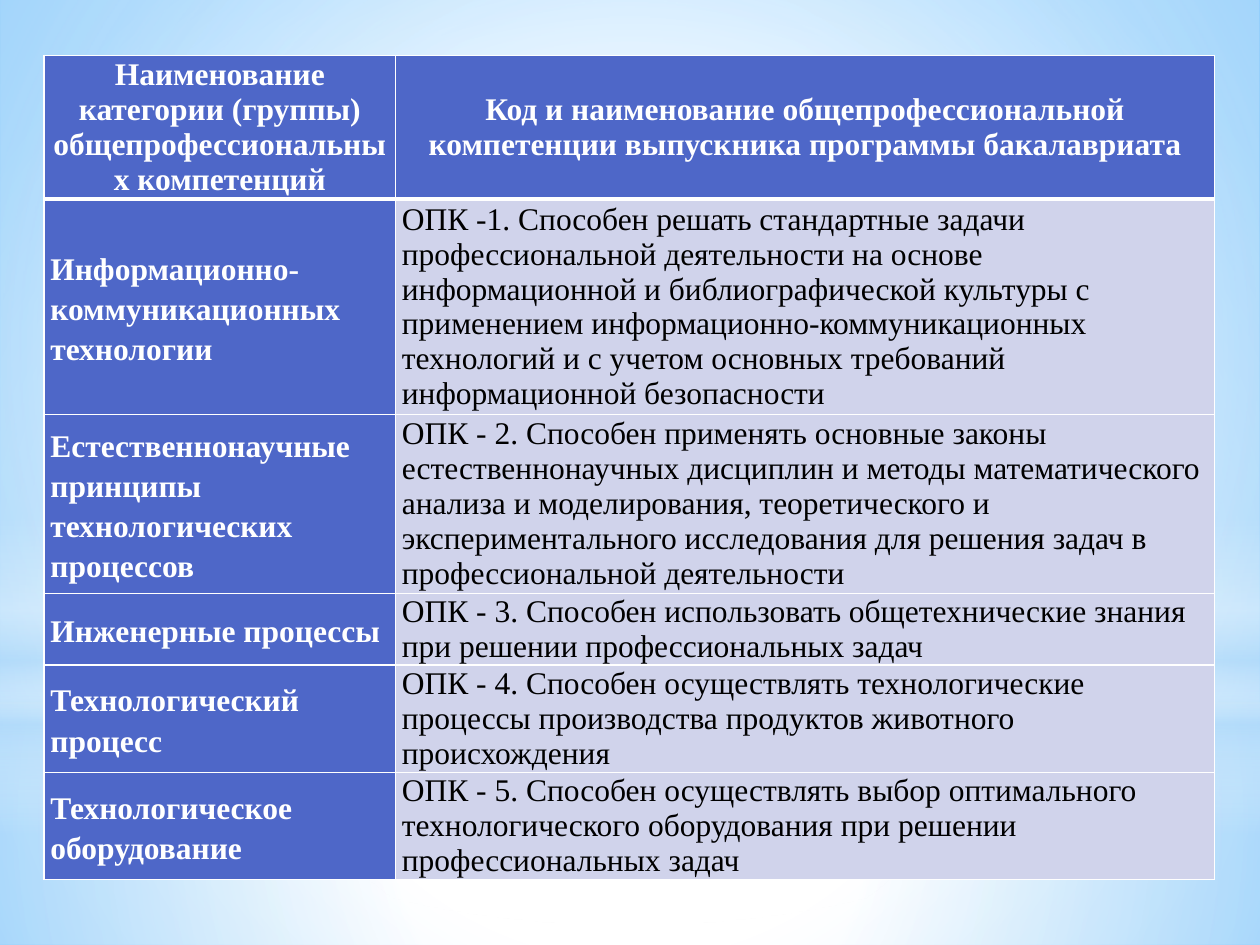
from dataclasses import dataclass

from lxml import etree
from pptx import Presentation
from pptx.dml.color import RGBColor
from pptx.enum import shapes, text
from pptx.oxml import ns
from pptx.util import Inches, Pt


@dataclass(frozen=True)
class Theme:
    font: str = "Times New Roman"
    size: int = 18
    white: str = "FFFFFF"
    black: str = "000000"
    accent: str = "4E67C8"
    pale: str = "D0D3EB"
    sky: str = "63BCFF"
    mist: str = "B4DCFA"
    rule: int = 1
    header_rule: int = 3


THEME = Theme()
CENTRE = (50, 50, 50, 50)
COLUMNS = (2.79, 6.5)
ROWS = (1.14, 1.71, 1.42, 0.57, 0.85, 0.85)
HEADER = (
    "Наименование категории (группы) общепрофессиональных компетенций",
    "Код и наименование общепрофессиональной компетенции выпускника программы бакалавриата",
)
COMPETENCIES = (
    (("Информационно-коммуникационных технологии",),
     "ОПК -1. Способен решать стандартные задачи профессиональной деятельности на основе "
     "информационной и библиографической культуры с применением "
     "информационно-коммуникационных технологий и с учетом основных требований "
     "информационной безопасности"),
    (("Естественнонаучные", "принципы технологических процессов"),
     "ОПК - 2. Способен применять основные законы естественнонаучных дисциплин и методы "
     "математического анализа и моделирования, теоретического и экспериментального "
     "исследования для решения задач в профессиональной деятельности"),
    (("Инженерные процессы",),
     "ОПК - 3. Способен использовать общетехнические знания при решении "
     "профессиональных задач"),
    (("Технологический процесс",),
     "ОПК - 4. Способен осуществлять технологические процессы производства продуктов "
     "животного происхождения"),
    (("Технологическое оборудование",),
     "ОПК - 5. Способен осуществлять выбор оптимального технологического оборудования "
     "при решении профессиональных задач"),
)


def add_node(parent, tag, **attributes):
    node = etree.SubElement(parent, ns.qn(tag))
    for name, value in attributes.items():
        node.set(name, str(value))
    return node


def paint_gradient(element, stops, focus=None):
    solid = element.xpath(".//a:solidFill")[0]
    holder = solid.getparent()
    gradient = add_node(holder, "a:gradFill", rotWithShape=1)
    stop_list = add_node(gradient, "a:gsLst")
    for position, colour, opacity in stops:
        stop = add_node(stop_list, "a:gs", pos=position * 1000)
        shade = add_node(stop, "a:srgbClr", val=colour)
        if opacity < 100:
            add_node(shade, "a:alpha", val=opacity * 1000)
    if focus:
        route = add_node(gradient, "a:path", path="circle")
        sides = {side: inset * 1000 for side, inset in zip("ltrb", focus)}
        add_node(route, "a:fillToRect", **sides)
    else:
        add_node(gradient, "a:lin", ang=90 * 60000, scaled=0)
    holder.replace(solid, gradient)


def add_glow(page, kind, box, stops, focus=None):
    glow = page.shapes.add_shape(kind, *map(Inches, box))
    glow.shadow.inherit = False
    glow.line.fill.background()
    glow.fill.solid()
    paint_gradient(glow.element.spPr, stops, focus)


def add_backdrop(page, box):
    left, top, width, height = box
    white, mist = THEME.white, THEME.mist
    rectangle, oval = shapes.MSO_SHAPE.RECTANGLE, shapes.MSO_SHAPE.OVAL
    horizon = 5.58
    page.background.fill.solid()
    paint_gradient(page.element,
                   [(0, white, 100), (42, white, 100), (100, THEME.sky, 100)],
                   (24, 44, 24, 12))
    add_glow(page, rectangle, (left, top + horizon, width, height - horizon),
             [(0, white, 91), (37, white, 76), (100, mist, 79)], CENTRE)
    add_glow(page, rectangle, (left, top, width, horizon),
             [(0, white, 89), (48, white, 62), (100, mist, 79)], CENTRE)
    add_glow(page, rectangle, (left, top + 4.12, width, 2.5),
             [(0, white, 0), (29, white, 30), (45, mist, 40),
              (55, white, 26), (65, mist, 60), (100, white, 0)])
    add_glow(page, oval, (left, top + 1.75, width, horizon),
             [(0, white, 100), (56, white, 0)], CENTRE)


def set_borders(cell, top, bottom):
    properties = cell._tc.get_or_add_tcPr()
    widths = {"L": THEME.rule, "R": THEME.rule, "T": top, "B": bottom}
    for index, (side, width) in enumerate(widths.items()):
        line = add_node(properties, f"a:ln{side}", w=int(Pt(width)))
        add_node(add_node(line, "a:solidFill"), "a:srgbClr", val=THEME.white)
        properties.insert(index, line)


def fill_cell(cell, lines, fill, colour, bold, align, spacing=None):
    cell.fill.solid()
    cell.fill.fore_color.rgb = RGBColor.from_string(fill)
    cell.vertical_anchor = text.MSO_ANCHOR.MIDDLE
    cell.margin_left = cell.margin_right = Inches(0.05)
    cell.margin_top = cell.margin_bottom = 0
    for index, line in enumerate(lines):
        frame = cell.text_frame
        para = frame.add_paragraph() if index else frame.paragraphs[0]
        para.alignment = align
        if spacing:
            para.line_spacing = spacing
        span = para.add_run()
        span.text = line
        span.font.name = THEME.font
        span.font.size = Pt(THEME.size)
        span.font.bold = bold
        span.font.color.rgb = RGBColor.from_string(colour)


def add_competency_table(page, box):
    frame = page.shapes.add_table(len(ROWS), len(COLUMNS), *map(Inches, box))
    table = frame.table
    for column, width in zip(table.columns, COLUMNS):
        column.width = Inches(width)
    for row, height in zip(table.rows, ROWS):
        row.height = Inches(height)
    for index, heading in enumerate(HEADER):
        fill_cell(table.cell(0, index), [heading], THEME.accent, THEME.white,
                  True, text.PP_ALIGN.CENTER)
    for index, (category, competency) in enumerate(COMPETENCIES, start=1):
        fill_cell(table.cell(index, 0), category, THEME.accent, THEME.white,
                  True, text.PP_ALIGN.LEFT, 1.15)
        fill_cell(table.cell(index, 1), [competency], THEME.pale, THEME.black,
                  False, text.PP_ALIGN.LEFT)
    for index, row in enumerate(table.rows):
        for cell in row.cells:
            set_borders(cell,
                        THEME.header_rule if index == 1 else THEME.rule,
                        THEME.header_rule if index == 0 else THEME.rule)


def main():
    deck = Presentation()
    deck.slide_width, deck.slide_height = Inches(10), Inches(7.5)
    page = deck.slides.add_slide(deck.slide_layouts.get_by_name("Blank"))
    add_backdrop(page, (0, 0, 10, 7.5))
    add_competency_table(page, (0.35, 0.44, sum(COLUMNS), sum(ROWS)))
    deck.save("out.pptx")


if __name__ == "__main__":
    main()
